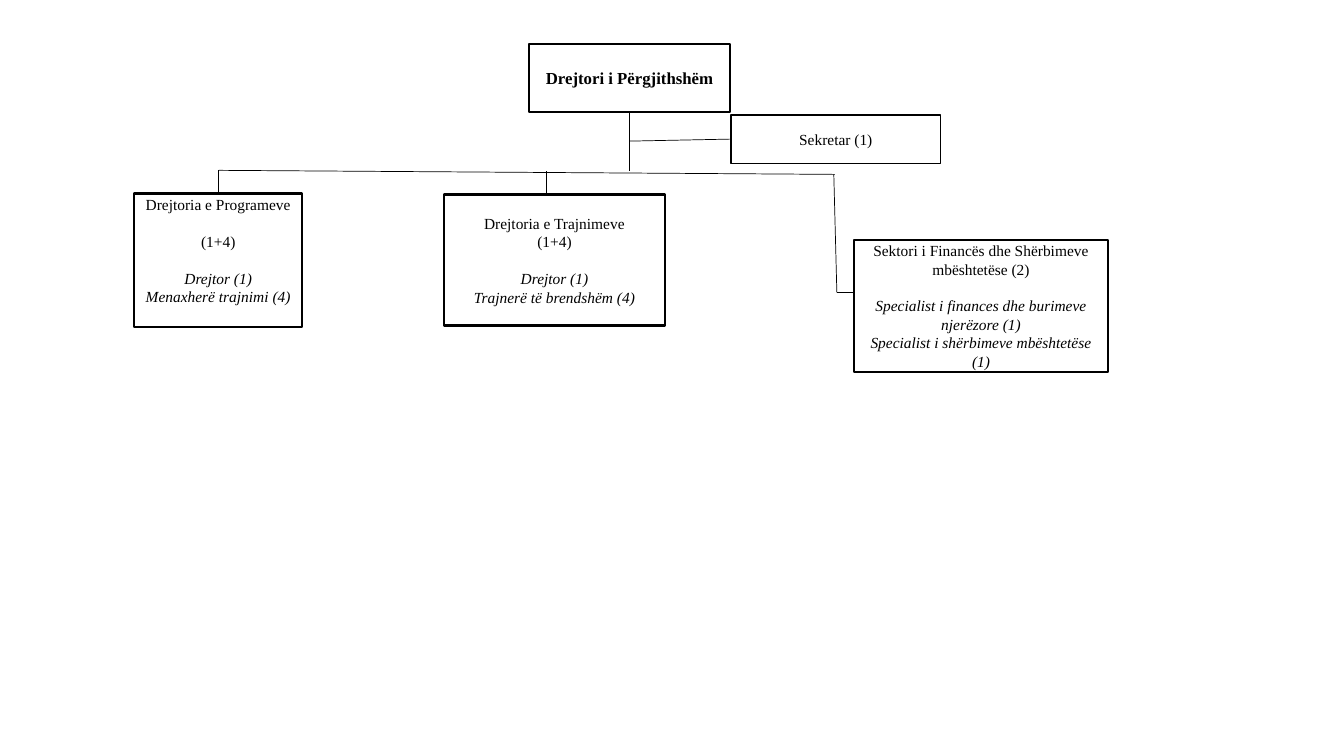
from pptx import Presentation
from pptx.dml.color import RGBColor
from pptx.enum.shapes import MSO_CONNECTOR, MSO_SHAPE
from pptx.enum.text import MSO_ANCHOR, PP_ALIGN
from pptx.oxml.ns import qn
from pptx.util import Pt
from lxml.etree import SubElement

PX = 9144  # 100 px to the inch
FONT = "Times New Roman"
COLORS = {"ink": "000000", "paper": "FFFFFF"}

# place, line width, anchor, groups of lines: (style, lines)
UNITS = [
    ((525, 44, 199, 67), 1.5, MSO_ANCHOR.MIDDLE,
     [("bold", ["Drejtori i Përgjithshëm"])]),
    ((725, 114, 208, 48), 1, MSO_ANCHOR.MIDDLE,
     [("plain", ["Sekretar (1)"])]),
    ((133, 192, 167, 132), 1.5, MSO_ANCHOR.TOP,
     [("plain", ["Drejtoria e Programeve"]),
      ("plain", ["(1+4)"]),
      ("italic", ["Drejtor (1)", "Menaxherë trajnimi (4)"])]),
    ((440, 193, 220, 130), 1.5, MSO_ANCHOR.MIDDLE,
     [("plain", ["Drejtoria e Trajnimeve", "(1+4)"]),
      ("italic", ["Drejtor (1)", "Trajnerë të brendshëm (4)"])]),
    ((847, 238, 252, 131), 1, MSO_ANCHOR.MIDDLE,
     [("plain", ["Sektori i Financës dhe Shërbimeve mbështetëse (2)"]),
      ("italic", ["Specialist i finances dhe burimeve njerëzore (1)",
                  "Specialist i shërbimeve mbështetëse (1)"])]),
]

LINKS = [
    (624, 111, 624, 170),
    (624, 140, 725, 138),
    (217, 169, 828, 173),
    (217, 169, 217, 192),
    (542, 170, 542, 193),
    (827, 173, 830, 290),
    (830, 290, 847, 290),
]


def color(name):
    return RGBColor.from_string(COLORS[name])


def add_unit(slide, place, width, anchor, groups):
    box = slide.shapes.add_shape(MSO_SHAPE.RECTANGLE, *(n * PX for n in place))
    box.shadow.inherit = False
    box.fill.solid()
    box.fill.fore_color.rgb = color("paper")
    box.line.color.rgb = color("ink")
    box.line.width = Pt(width)
    frame = box.text_frame
    frame.word_wrap = True
    frame.vertical_anchor = anchor
    frame.margin_left = frame.margin_right = 10 * PX
    frame.margin_top = frame.margin_bottom = 2 * PX
    para = frame.paragraphs[0]
    for g, (style, lines) in enumerate(groups):
        for i, line in enumerate(lines):
            if g or i:
                para = frame.add_paragraph()
            write(para, line, style)
            if g and not i:
                para.space_before = Pt(13)


def write(para, line, style):
    para.text = line
    para.alignment = PP_ALIGN.CENTER
    font = para.font
    font.name = FONT
    font.size = Pt(12 if style == "bold" else 11)
    font.bold = style == "bold"
    font.italic = style == "italic"
    font.color.rgb = color("ink")


def add_link(slide, ends):
    link = slide.shapes.add_connector(
        MSO_CONNECTOR.STRAIGHT, *(n * PX for n in ends))
    link.line.color.rgb = color("ink")
    link.line.width = Pt(0.5)
    SubElement(link._element.spPr, qn("a:effectLst"))


def main():
    deck = Presentation()
    deck.slide_width = 1333 * PX
    deck.slide_height = 750 * PX
    slide = deck.slides.add_slide(deck.slide_layouts[6])
    for unit in UNITS:
        add_unit(slide, *unit)
    for ends in LINKS:
        add_link(slide, ends)
    deck.save("out.pptx")


if __name__ == "__main__":
    main()
